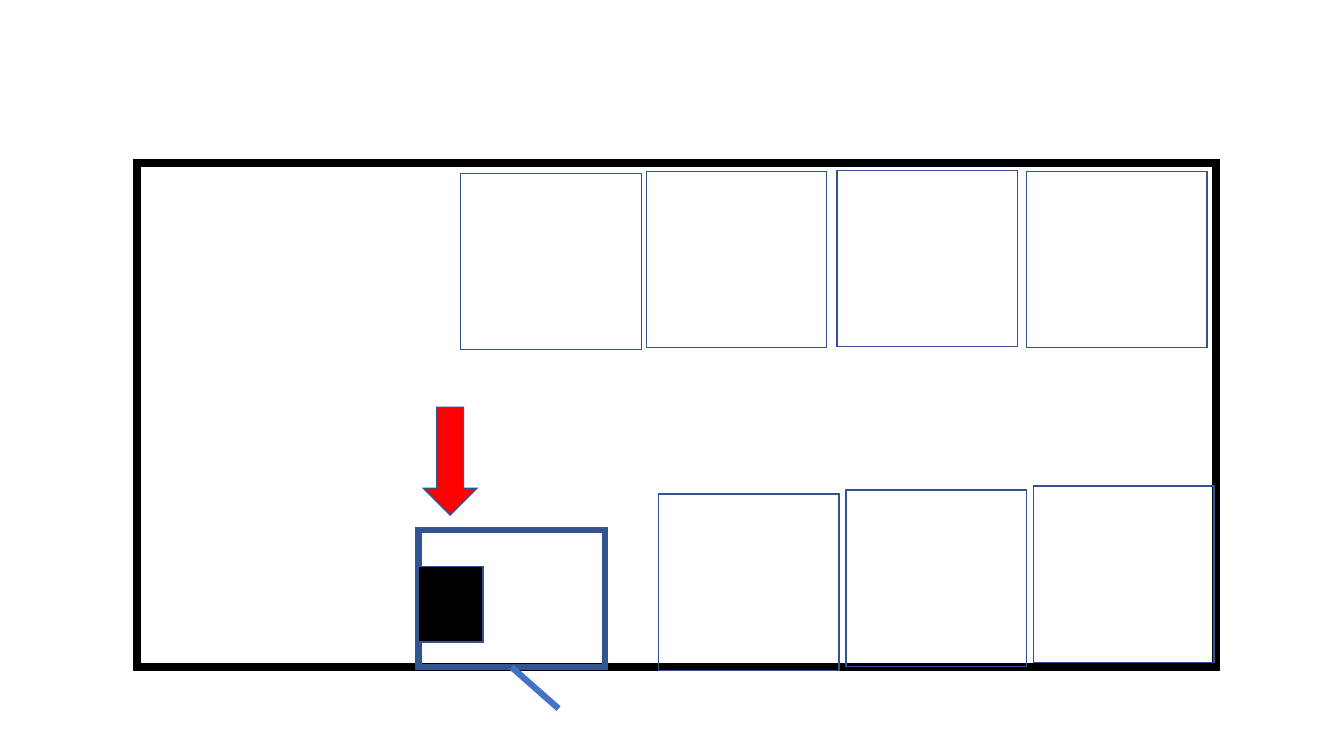
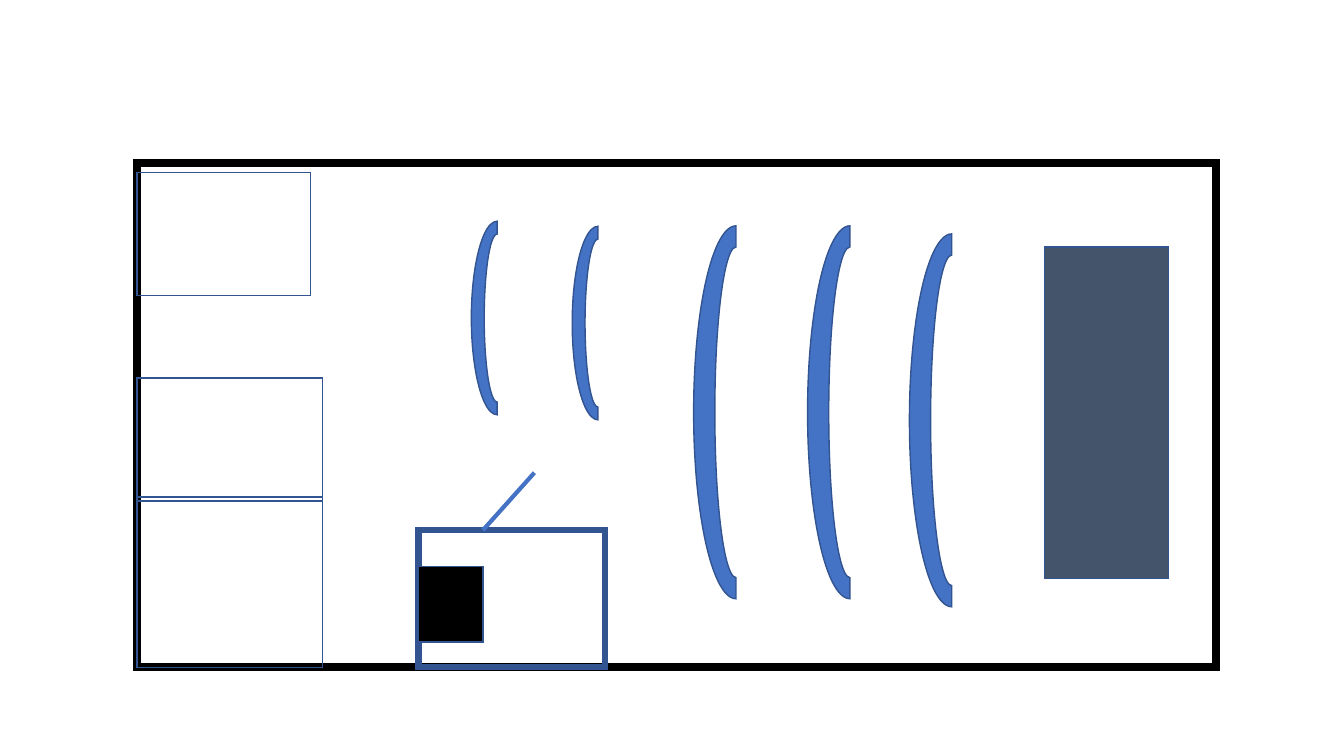
import lxml.etree
import pptx
import pptx.dml.color
import pptx.enum.shapes
import pptx.oxml.ns
import pptx.util

PX = 9144
SHAPE = pptx.enum.shapes.MSO_SHAPE
COLORS = {
    "wall": "000000",
    "outline": "325491",
    "accent": "4472C4",
    "pointer": "FF0000",
    "panel": "44546A",
}


class FloorPlan:
    def __init__(self):
        self.deck = pptx.Presentation()
        self.deck.slide_width = 1333 * PX
        self.deck.slide_height = 750 * PX
        self.slide = None

    def color(self, name):
        return pptx.dml.color.RGBColor.from_string(COLORS[name])

    def stroke(self, line, name, weight):
        line.color.rgb = self.color(name)
        line.width = pptx.util.Pt(weight)

    def block(self, x, y, width, height, fill=None, line="outline", weight=1,
              kind=SHAPE.RECTANGLE, rotation=0):
        block = self.slide.shapes.add_shape(
            kind, x * PX, y * PX, width * PX, height * PX)
        block.rotation = rotation
        block.shadow.inherit = False
        if fill:
            block.fill.solid()
            block.fill.fore_color.rgb = self.color(fill)
        else:
            block.fill.background()
        self.stroke(block.line, line, weight)
        outline = block._element.spPr.find(pptx.oxml.ns.qn("a:ln"))
        lxml.etree.SubElement(outline, pptx.oxml.ns.qn("a:miter"), lim="800000")
        return block

    def line(self, x1, y1, x2, y2, weight):
        line = self.slide.shapes.add_connector(
            pptx.enum.shapes.MSO_CONNECTOR.STRAIGHT,
            x1 * PX, y1 * PX, x2 * PX, y2 * PX)
        self.stroke(line.line, "accent", weight)
        lxml.etree.SubElement(
            line._element.spPr, pptx.oxml.ns.qn("a:effectLst"))
        return line

    def wave(self, x, y, length, depth):
        self.block(x, y, length, depth, "accent",
                   kind=SHAPE.BLOCK_ARC, rotation=270)

    def room(self):
        self.slide = self.deck.slides.add_slide(self.deck.slide_layouts[6])
        self.block(136, 162, 1070, 500, line="wall", weight=6)
        booth = self.block(415, 526, 185, 136, weight=4.5)
        self.block(415, 562, 64, 75, "wall")
        return booth


def build_seating(plan):
    booth = plan.room()
    door = plan.line(507, 662, 554, 703, 4.5)
    door.begin_connect(booth, 2)
    upper_row = [(457, 172), (641, 170), (830, 169), (1018, 170)]
    lower_row = [(653 + 186 * i, 490 - 4 * i) for i in range(3)]
    for x, y in upper_row + lower_row:
        plan.block(x, y, 179, 175)
    plan.block(420, 404, 53, 107, "pointer", kind=SHAPE.DOWN_ARROW)


def build_stage(plan):
    plan.room()
    plan.line(479, 526, 530, 469, 3)
    for y, width, height in [(493, 184, 169), (375, 184, 122), (171, 172, 122)]:
        plan.block(136, y, width, height)
    for x, y in [(545, 367), (658, 367), (759, 375)]:
        plan.wave(x, y, 370, 84)
    plan.block(1036, 245, 123, 329, "panel")
    for x, y in [(497, 295), (397, 290)]:
        plan.wave(x, y, 192, 51)


def main():
    plan = FloorPlan()
    build_seating(plan)
    build_stage(plan)
    plan.deck.save("out.pptx")


if __name__ == "__main__":
    main()
